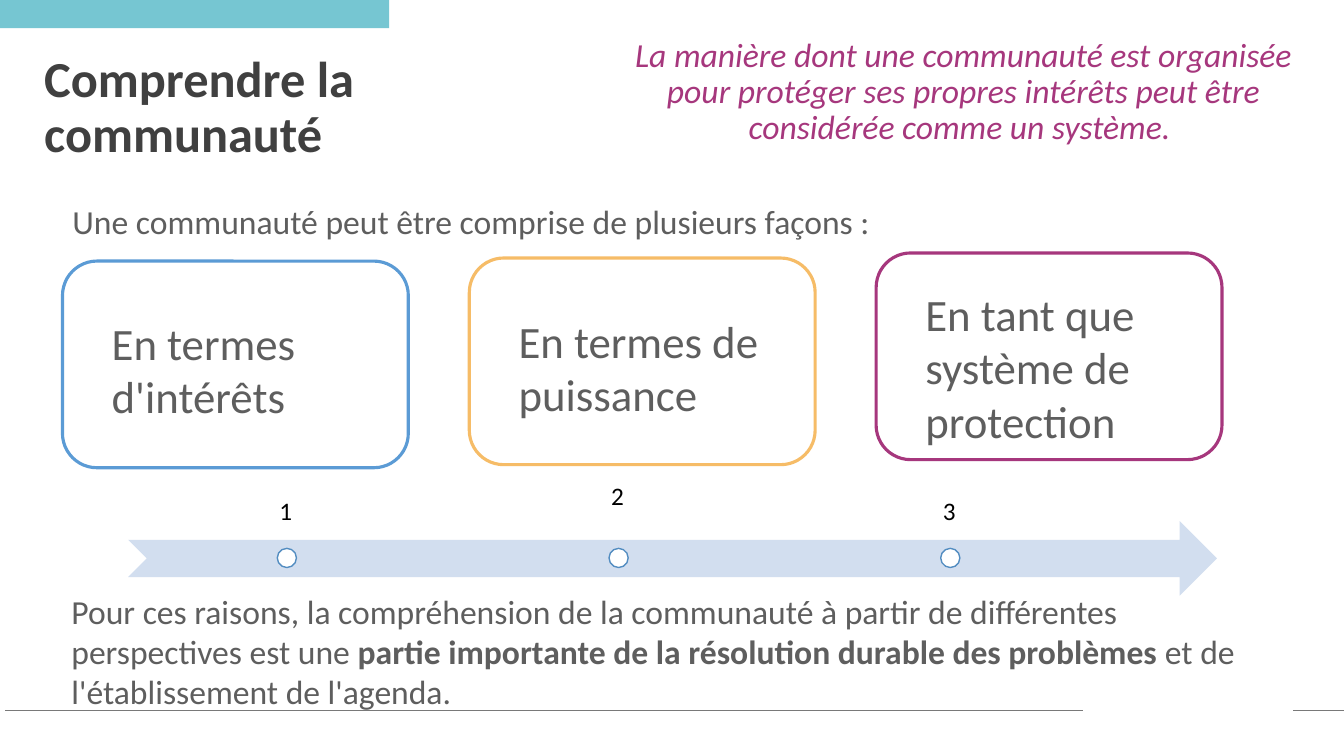
"""Builds the slide on the ways of understanding a community."""
from lxml import etree
from pptx import Presentation, util as u
from pptx.dml.color import RGBColor
from pptx.enum import shapes, text
from pptx.oxml import ns

SHAPE = shapes.MSO_SHAPE
ALIGN = text.PP_ALIGN
ANCHOR = text.MSO_ANCHOR


def colour(value):
    return RGBColor.from_string(value)


class CommunitySlide:
    font = "Calibri"
    grey = "5E5E5E"

    def __init__(self, deck):
        self.slide = deck.slides.add_slide(deck.slide_layouts[6])

    def shape(self, kind, box, fill, line=None, width=1):
        item = self.slide.shapes.add_shape(kind, *map(u.Inches, box))
        item.shadow.inherit = False
        item.fill.solid()
        item.fill.fore_color.rgb = colour(fill)
        if line:
            item.line.color.rgb = colour(line)
            item.line.width = u.Pt(width)
        else:
            item.line.fill.background()

    def rule(self, start, end, y):
        item = self.slide.shapes.add_connector(
            shapes.MSO_CONNECTOR.STRAIGHT, *map(u.Inches, (start, y, end, y)))
        item.line.color.rgb = colour("797979")
        item.line.width = u.Pt(0.5)
        etree.SubElement(item._element.spPr, ns.qn("a:effectLst"))

    def text(self, box, runs, size, ink=grey, italic=False, align=ALIGN.LEFT,
             anchor=ANCHOR.TOP, spacing=1.0, inset=None):
        frame = self.slide.shapes.add_textbox(*map(u.Inches, box)).text_frame
        frame.word_wrap = True
        frame.vertical_anchor = anchor
        if inset is not None:
            frame.margin_left = frame.margin_right = u.Inches(inset)
            frame.margin_top = frame.margin_bottom = u.Inches(inset)
        paragraph = frame.paragraphs[0]
        paragraph.alignment = align
        paragraph.line_spacing = spacing
        for words, bold in runs:
            run = paragraph.add_run()
            run.text = words
            run.font.name = self.font
            run.font.size = u.Pt(size)
            run.font.bold = bold
            run.font.italic = italic
            run.font.color.rgb = colour(ink)


def main():
    deck = Presentation()
    deck.slide_width, deck.slide_height = u.Inches(13.33), u.Inches(7.5)
    page = CommunitySlide(deck)

    page.shape(SHAPE.RECTANGLE, (0, 0, 3.86, 0.28), "76C6D2")
    page.rule(10.74, 0.05, 7.05)
    page.rule(13.33, 12.82, 7.05)
    page.text((0.34, 0.49, 5.74, 1.6), [("Comprendre la communauté", True)],
              36, "404040", spacing=0.9)
    page.text((6.12, 0.33, 6.87, 1.23),
              [("La manière dont une communauté est organisée pour protéger ses "
                "propres intérêts peut être considérée comme un système. ", False)],
              24, "A6377D", italic=True, align=ALIGN.CENTER, spacing=0.9)

    perspectives = [
        ("En termes d'intérêts", "5B9BD5", 2.59, 3.08, 1.18),
        ("En termes de puissance", "F6BC67", 2.56, 3.06, 1.18),
        ("En tant que système de protection", "A6377D", 2.51, 2.79, 1.72),
    ]
    for index, (label, border, top, label_top, label_height) in enumerate(perspectives):
        left = 0.62 + 4.035 * index
        page.shape(SHAPE.ROUNDED_RECTANGLE, (left, top, 3.43, 2.05),
                   "FFFFFF", border, 2.25)
        page.text((left + 0.39, label_top, 2.8, label_height), [(label, False)], 32)

    page.shape(SHAPE.NOTCHED_RIGHT_ARROW, (1.27, 5.17, 10.8, 0.74), "D2DEEF")
    steps = [(4.61, ANCHOR.BOTTOM), (4.66, ANCHOR.TOP), (4.61, ANCHOR.BOTTOM)]
    for index, (top, anchor) in enumerate(steps):
        left = 1.27 + 3.29 * index
        page.text((left, top, 3.13, 0.74), [(str(index + 1), False)], 18, "000000",
                  align=ALIGN.CENTER, anchor=anchor, spacing=0.9, inset=0.14)
        page.shape(SHAPE.OVAL, (left + 1.48, 5.44, 0.19, 0.19), "FFFFFF", "538DC1")

    page.text((0.62, 1.94, 8.58, 0.5),
              [("Une communauté peut être comprise de plusieurs façons :", False)], 24)
    page.text((0.61, 5.81, 12.11, 0.91),
              [("Pour ces raisons, la compréhension de la communauté à partir de "
                "différentes perspectives est une ", False),
               ("partie importante de la résolution durable des problèmes", True),
               (" et de l'établissement de l'agenda.", False)], 24)

    deck.save("out.pptx")


if __name__ == "__main__":
    main()
